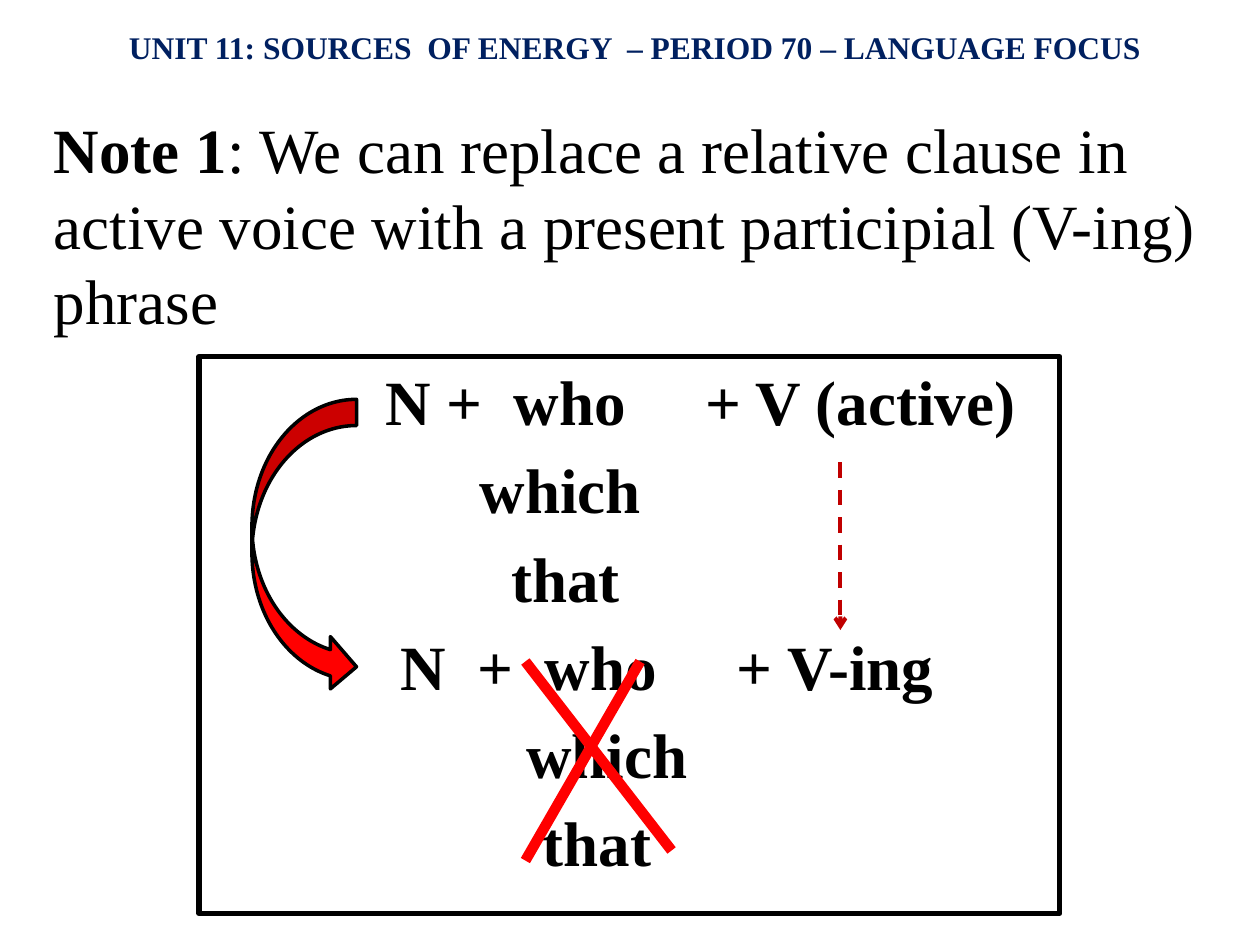
from dataclasses import dataclass

from lxml.etree import SubElement
from pptx import Presentation
from pptx.dml.color import RGBColor
from pptx.enum.dml import MSO_LINE_DASH_STYLE as Dash
from pptx.enum.shapes import MSO_CONNECTOR as Connector, MSO_SHAPE as Shape
from pptx.enum.text import MSO_ANCHOR as Anchor, MSO_AUTO_SIZE as AutoSize, PP_ALIGN as Align
from pptx.oxml.ns import qn
from pptx.util import Inches, Pt

FONT = "Times New Roman"
BLACK, NAVY, RED, DARK_RED = "000000", "002060", "FF0000", "C00000"


@dataclass
class FormulaRow:
    text: str
    stops: tuple[float, ...]


@dataclass
class Stroke:
    start: tuple[float, float]
    end: tuple[float, float]
    colour: str
    width: float
    is_arrow: bool = False


FORMULA = [
    FormulaRow("\tN +  who\t+ V (active)", (1.38, 3.92)),
    FormulaRow("\twhich", (2.13,)),
    FormulaRow("\tthat", (2.38,)),
    FormulaRow("\tN  +  who\t+ V-ing", (1.5, 4.17)),
    FormulaRow("\twhich", (2.5,)),
    FormulaRow("\tthat", (2.63,)),
]
STROKES = [
    Stroke((4.17, 5.25), (5.33, 6.75), RED, 6),
    Stroke((5.08, 5.25), (4.17, 6.83), RED, 6),
    Stroke((6.67, 3.67), (6.67, 5), DARK_RED, 2.25, is_arrow=True),
]


def colour_of(value: str) -> RGBColor:
    return RGBColor.from_string(value)


def apply(target, values: dict) -> None:
    for name, value in values.items():
        setattr(target, name, value)


def place(box, left: float, top: float, width: float, height: float) -> None:
    names = ("left", "top", "width", "height")
    apply(box, dict(zip(names, map(Inches, (left, top, width, height)))))


def add_span(para, text: str, size: float = 36, colour: str = BLACK, bold: bool = True) -> None:
    span = para.add_run()
    span.text = text
    apply(span.font, {"name": FONT, "size": Pt(size), "bold": bold})
    span.font.color.rgb = colour_of(colour)


def add_outlined(page, kind: Shape, bounds: tuple, width: float, fill: str | None = None):
    box = page.shapes.add_shape(kind, *map(Inches, bounds))
    box.shadow.inherit = False
    if fill:
        box.fill.solid()
        box.fill.fore_color.rgb = colour_of(fill)
    else:
        box.fill.background()
    box.line.color.rgb = colour_of(BLACK)
    box.line.width = Pt(width)
    return box


def add_formula(page) -> None:
    box = add_outlined(page, Shape.RECTANGLE, (1.58, 2.83, 6.83, 4.42), 3)
    frame = box.text_frame
    apply(frame, {"word_wrap": True, "vertical_anchor": Anchor.TOP})
    for index, row in enumerate(FORMULA):
        para = frame.add_paragraph() if index else frame.paragraphs[0]
        apply(para, {"alignment": Align.LEFT, "space_before": Pt(7.2)})
        add_span(para, row.text)
        tabs = SubElement(para._p.get_or_add_pPr(), qn("a:tabLst"))
        for stop in row.stops:
            SubElement(tabs, qn("a:tab"), pos=str(Inches(stop)), algn="l")


def add_stroke(page, stroke: Stroke) -> None:
    ends = map(Inches, (*stroke.start, *stroke.end))
    line = page.shapes.add_connector(Connector.STRAIGHT, *ends)
    line.line.color.rgb = colour_of(stroke.colour)
    line.line.width = Pt(stroke.width)
    if stroke.is_arrow:
        line.line.dash_style = Dash.DASH
        SubElement(line.line._get_or_add_ln(), qn("a:tailEnd"), type="arrow")
    SubElement(line._element.spPr, qn("a:effectLst"))


def add_note(page) -> None:
    box = page.shapes.add_textbox(*map(Inches, (0.33, 0.83, 9.42, 1.92)))
    frame = box.text_frame
    apply(frame, {"word_wrap": True, "auto_size": AutoSize.SHAPE_TO_FIT_TEXT})
    para = frame.paragraphs[0]
    add_span(para, "Note 1")
    add_span(
        para,
        ": We can replace a relative clause in active voice "
        "with a present participial (V-ing) phrase",
        bold=False,
    )


def format_title(title) -> None:
    place(title, 0.25, 0.17, 9.58, 0.4)
    frame = title.text_frame
    apply(frame, {"word_wrap": True, "auto_size": AutoSize.NONE, "vertical_anchor": Anchor.TOP})
    para = frame.paragraphs[0]
    para.alignment = Align.CENTER
    add_span(para, "UNIT 11: SOURCES  OF ENERGY  – PERIOD 70 – LANGUAGE FOCUS", 18, NAVY)


def main() -> None:
    deck = Presentation()
    apply(deck, {"slide_width": Inches(10), "slide_height": Inches(7.5)})
    page = deck.slides.add_slide(deck.slide_layouts[5])
    format_title(page.shapes.title)
    add_formula(page)
    for stroke in STROKES:
        add_stroke(page, stroke)
    add_note(page)
    add_outlined(page, Shape.CURVED_RIGHT_ARROW, (2, 3.17, 0.83, 2.33), 2, RED)
    deck.save("out.pptx")


if __name__ == "__main__":
    main()
